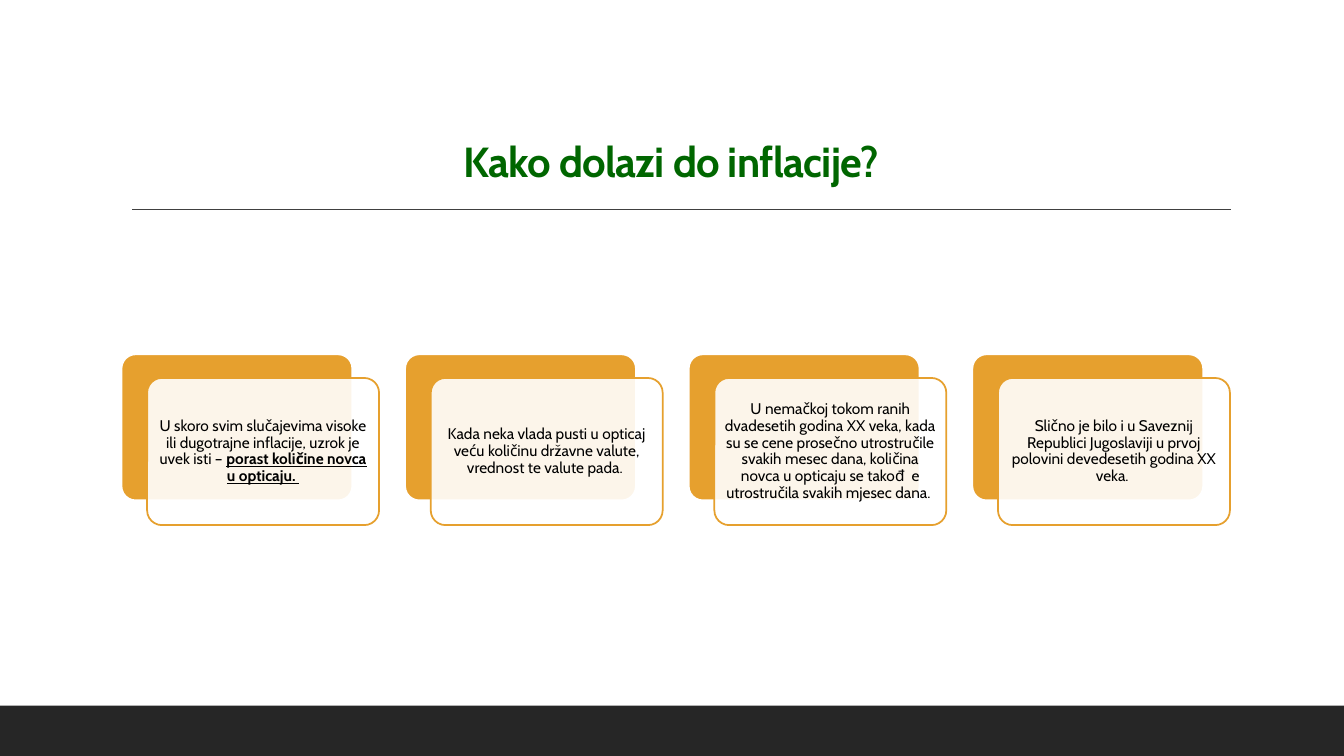
"""Build the slide on how inflation comes about."""
import dataclasses

import pptx
import pptx.dml.color
import pptx.enum.shapes
import pptx.enum.text
import pptx.oxml
import pptx.oxml.ns
import pptx.util

SHAPES = pptx.enum.shapes.MSO_SHAPE
ANCHORS = pptx.enum.text.MSO_ANCHOR
SLIDE_WIDTH, SLIDE_HEIGHT = 13.33, 7.5
GRID_LEFT, GRID_TOP, COLUMN_PITCH = 1.2, 3.51, 2.813
CARD_WIDTH, CARD_HEIGHT = 2.3, 1.46
FRONT_SHIFT_X, FRONT_SHIFT_Y = 0.26, 0.24


@dataclasses.dataclass(frozen=True)
class Theme:
    """Colours, font and type sizes of the slide."""
    title: str = "006600"
    accent: str = "E6A02E"
    paper: str = "FFFFFF"
    ink: str = "000000"
    rule: str = "404040"
    footer: str = "262626"
    font: str = "Cabin"
    title_size: int = 30
    card_size: int = 11


THEME = Theme()
EMPHASIS = {"bold": True, "underline": True}
CAUSES = [
    [("U skoro svim slučajevima visoke ili dugotrajne inflacije, uzrok je uvek isti – ", {}),
     ("porast količine novca u opticaju. ", EMPHASIS)],
    [("Kada neka vlada pusti u opticaj veću količinu državne valute, "
      "vrednost te valute pada. ", {})],
    [("U nemačkoj tokom ranih dvadesetih godina XX veka, kada su se cene prosečno "
      "utrostručile svakih mesec dana, količina novca u opticaju se takođ  e "
      "utrostručila svakih mjesec dana. ", {})],
    [("Slično je bilo i u Saveznij Republici Jugoslaviji u prvoj polovini "
      "devedesetih godina XX veka. ", {})],
]


def inches(*lengths):
    """Convert lengths in inches to slide units."""
    return [pptx.util.Inches(length) for length in lengths]


def rgb(code):
    """Turn a hex code into a colour."""
    return pptx.dml.color.RGBColor.from_string(code)


def apply_format(target, values):
    """Set each attribute named in a dict of format values."""
    for attribute, value in values.items():
        setattr(target, attribute, value)


def add_panel(slide, preset, box, fill, outline=None, weight=0):
    """Add a flat filled panel, outlined when a colour is given."""
    panel = slide.shapes.add_shape(preset, *inches(*box))
    panel.shadow.inherit = False
    panel.fill.solid()
    panel.fill.fore_color.rgb = rgb(fill)
    if outline:
        panel.line.color.rgb = rgb(outline)
        panel.line.width = pptx.util.Pt(weight)
    else:
        panel.line.fill.background()
    return panel


def add_card(slide, box, fill, outline, weight):
    """Add a panel with gently rounded corners."""
    card = add_panel(slide, SHAPES.ROUNDED_RECTANGLE, box, fill, outline, weight)
    card.adjustments[0] = 0.1
    return card


def set_opacity(panel, percent):
    """Make the solid fill of a panel partly transparent."""
    tint = panel.fill._xPr.find(".//" + pptx.oxml.ns.qn("a:srgbClr"))
    alpha = pptx.oxml.parse_xml(f'<a:alpha {pptx.oxml.ns.nsdecls("a")} val="{percent * 1000}"/>')
    tint.append(alpha)


def write_text(frame, pieces, size, colour, anchor, space_after):
    """Write one centred paragraph made of formatted pieces."""
    apply_format(frame, {"word_wrap": True, "vertical_anchor": anchor})
    paragraph = frame.paragraphs[0]
    apply_format(paragraph, {
        "alignment": pptx.enum.text.PP_ALIGN.CENTER,
        "line_spacing": 0.9,
        "space_after": pptx.util.Pt(space_after),
    })
    for words, emphasis in pieces:
        run = paragraph.add_run()
        run.text = words
        apply_format(run.font, {"name": THEME.font, "size": pptx.util.Pt(size), **emphasis})
        run.font.color.rgb = rgb(colour)
    return paragraph


def add_title(slide, words):
    """Add the slightly condensed bold title."""
    title = slide.shapes.add_textbox(*inches(GRID_LEFT, 0.31, 11, 1.59))
    paragraph = write_text(title.text_frame, [(words, {"bold": True})], THEME.title_size,
                           THEME.title, ANCHORS.BOTTOM, 6)
    paragraph.runs[0].font._element.set("spc", "-50")


def add_rule(slide, left, right, height):
    """Add the thin horizontal rule under the title."""
    rule = slide.shapes.add_connector(pptx.enum.shapes.MSO_CONNECTOR.STRAIGHT,
                                      *inches(left, height, right, height))
    rule.line.color.rgb = rgb(THEME.rule)
    rule.line.width = pptx.util.Pt(1)
    rule._element.spPr.append(
        pptx.oxml.parse_xml(f'<a:effectLst {pptx.oxml.ns.nsdecls("a")}/>'))


def add_cause(slide, column, pieces):
    """Add a coloured back card and the text card overlapping it."""
    left = GRID_LEFT + column * COLUMN_PITCH
    add_card(slide, (left, GRID_TOP, CARD_WIDTH, CARD_HEIGHT), THEME.accent, THEME.paper, 2)
    front = add_card(
        slide, (left + FRONT_SHIFT_X, GRID_TOP + FRONT_SHIFT_Y, CARD_WIDTH, CARD_HEIGHT),
        THEME.paper, THEME.accent, 1.25)
    set_opacity(front, 90)
    sides = ("left", "right", "top", "bottom")
    apply_format(front.text_frame,
                 {f"margin_{side}": pptx.util.Inches(0.05) for side in sides})
    write_text(front.text_frame, pieces, THEME.card_size, THEME.ink, ANCHORS.MIDDLE, 4)


def main():
    """Build and save the slide."""
    deck = pptx.Presentation()
    deck.slide_width, deck.slide_height = inches(SLIDE_WIDTH, SLIDE_HEIGHT)
    slide = deck.slides.add_slide(deck.slide_layouts[6])
    footer_height = SLIDE_HEIGHT / 15
    add_panel(slide, SHAPES.RECTANGLE,
              (0, SLIDE_HEIGHT - footer_height, SLIDE_WIDTH, footer_height), THEME.footer)
    add_rule(slide, 1.31, 12.21, 2.08)
    add_title(slide, "Kako dolazi do inflacije? ")
    for column, pieces in enumerate(CAUSES):
        add_cause(slide, column, pieces)
    deck.save("out.pptx")


if __name__ == "__main__":
    main()
